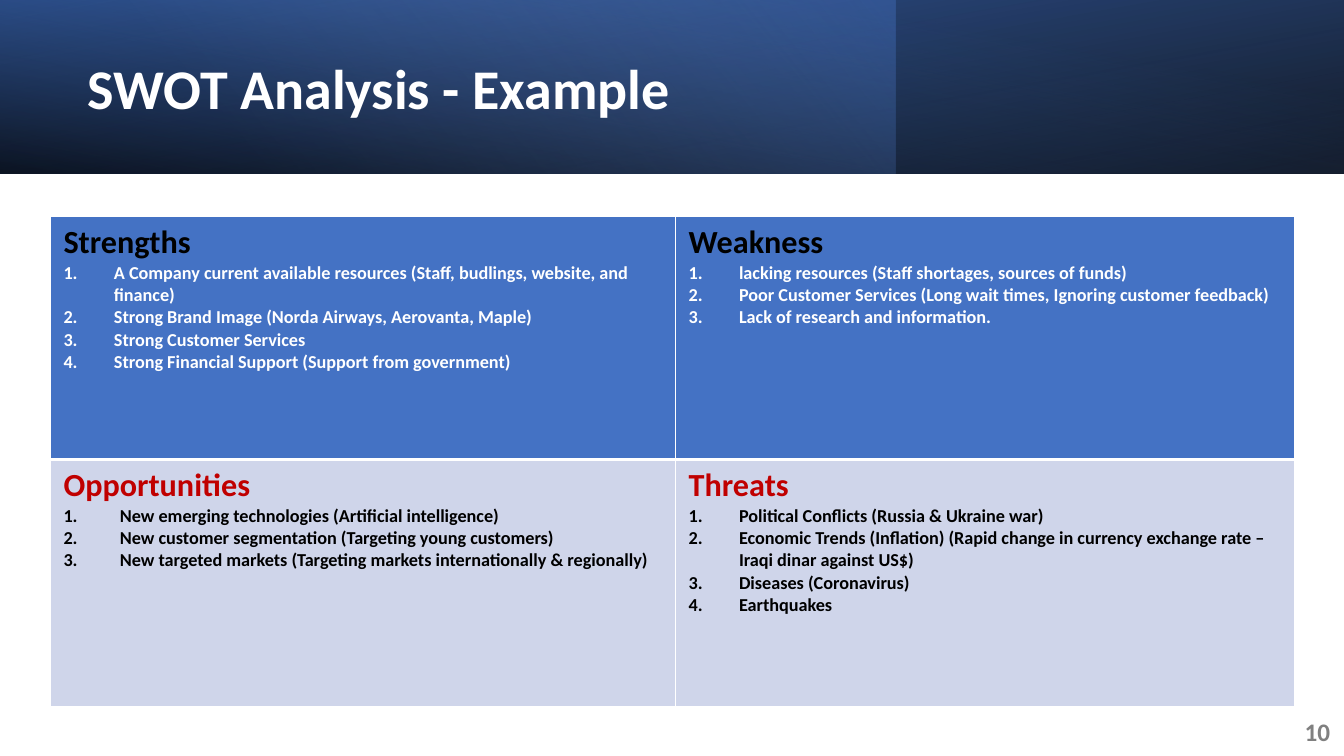
"""Build a SWOT analysis slide with a gradient banner and a two-by-two table."""
from pptx import Presentation
from pptx.dml.color import RGBColor
from pptx.enum.shapes import MSO_SHAPE
from pptx.enum.text import MSO_ANCHOR, PP_ALIGN
from pptx.oxml import parse_xml
from pptx.oxml.ns import nsdecls, qn
from pptx.util import Inches, Pt

WHITE = RGBColor(0xFF, 0xFF, 0xFF)
BLACK = RGBColor(0x00, 0x00, 0x00)
RED = RGBColor(0xC0, 0x00, 0x00)
GREY = RGBColor(0x80, 0x80, 0x80)
BLUE = RGBColor(0x44, 0x72, 0xC4)
PALE = RGBColor(0xCF, 0xD5, 0xEA)
NAVY = RGBColor(0x2F, 0x55, 0x97)
SKY = RGBColor(0x8F, 0xAA, 0xDC)

WIDTH, HEIGHT, BANNER = 13.33, 7.5, 1.72
COLUMNS, ROWS = (6.2, 6.14), (2.41, 2.45)

LAYERS = [
    (WIDTH, 100, 180, True, [(0, BLACK, 96), (100, NAVY, 100)]),
    (WIDTH * 2 / 3, 140, 0, False, [(0, BLUE, 41), (74, SKY, 0)]),
    (WIDTH, 260, 0, True, [(0, BLACK, 63), (78, BLUE, 15)]),
]

QUADRANTS = [
    [("Strengths", 0.5, [
        "A Company current available resources (Staff, budlings, website, and finance)",
        "Strong Brand Image (Norda Airways, Aerovanta, Maple)",
        "Strong Customer Services",
        "Strong Financial Support (Support from government)"]),
     ("Weakness", 0.5, [
         "lacking resources (Staff shortages, sources of funds)",
         "Poor Customer Services (Long wait times, Ignoring customer feedback)",
         "Lack of research and information."])],
    [("Opportunities", 0.56, [
        "New emerging technologies (Artificial intelligence)",
        "New customer segmentation (Targeting young customers)",
        "New targeted markets (Targeting markets internationally & regionally)"]),
     ("Threats", 0.5, [
         "Political Conflicts (Russia & Ukraine war)",
         "Economic Trends (Inflation) (Rapid change in currency exchange rate – "
         "Iraqi dinar against US$)",
         "Diseases (Coronavirus)",
         "Earthquakes"])],
]
ROW_COLORS = [(BLUE, BLACK, WHITE), (PALE, RED, BLACK)]


def write(paragraph, text, size, color):
    paragraph.text = text
    font = paragraph.font
    font.name, font.size, font.bold = "Calibri", Pt(size), True
    font.color.rgb = color


def add_label(left, top, width, height, text, size, color):
    frame = slide.shapes.add_textbox(
        Inches(left), Inches(top), Inches(width), Inches(height)).text_frame
    frame.word_wrap = True
    frame.vertical_anchor = MSO_ANCHOR.MIDDLE
    write(frame.paragraphs[0], text, size, color)
    return frame.paragraphs[0]


presentation = Presentation()
presentation.slide_width, presentation.slide_height = Inches(WIDTH), Inches(HEIGHT)
slide = presentation.slides.add_slide(presentation.slide_layouts[6])

for width, angle, rotation, flipped, stops in LAYERS:
    layer = slide.shapes.add_shape(MSO_SHAPE.RECTANGLE, 0, 0, Inches(width), Inches(BANNER))
    layer.shadow.inherit = False
    layer.line.fill.background()
    layer.fill.background()
    layer.rotation = rotation
    properties = layer._element.spPr
    if flipped:
        properties.find(qn("a:xfrm")).set("flipH", "1")
    stop_xml = "".join(
        f'<a:gs pos="{position * 1000}"><a:srgbClr val="{color}">'
        f'<a:alpha val="{opacity * 1000}"/></a:srgbClr></a:gs>'
        for position, color, opacity in stops)
    gradient = parse_xml(
        f'<a:gradFill {nsdecls("a")} rotWithShape="1"><a:gsLst>{stop_xml}</a:gsLst>'
        f'<a:lin ang="{angle * 60000}" scaled="0"/></a:gradFill>')
    properties.replace(properties.find(qn("a:noFill")), gradient)

title = add_label(0.77, 0.27, 7.72, 1.27, "SWOT Analysis - Example", 40, WHITE)
title.line_spacing = 0.9
number = add_label(12.8, 7.06, 0.49, 0.4, "10", 18, GREY)
number.alignment = PP_ALIGN.RIGHT
number.space_after = Pt(6)

table = slide.shapes.add_table(
    2, 2, Inches(0.5), Inches(2.15), Inches(sum(COLUMNS)), Inches(sum(ROWS))).table
for column, width in zip(table.columns, COLUMNS):
    column.width = Inches(width)
for row, height in zip(table.rows, ROWS):
    row.height = Inches(height)

for row, (fill, heading_color, item_color) in enumerate(ROW_COLORS):
    for column, (heading, indent, items) in enumerate(QUADRANTS[row]):
        cell = table.cell(row, column)
        cell.margin_left = cell.margin_right = Inches(0.13)
        cell.margin_top = cell.margin_bottom = Inches(0.06)
        cell.fill.solid()
        cell.fill.fore_color.rgb = fill
        thick_side = "B" if row == 0 else "T"
        for position, side in enumerate("LRTB"):
            weight = Pt(3 if side == thick_side else 1)
            cell._tc.tcPr.insert(position, parse_xml(
                f'<a:ln{side} {nsdecls("a")} w="{weight}"><a:solidFill>'
                f'<a:srgbClr val="{WHITE}"/></a:solidFill></a:ln{side}>'))
        write(cell.text_frame.paragraphs[0], heading, 23, heading_color)
        for item in items:
            paragraph = cell.text_frame.add_paragraph()
            write(paragraph, item, 13, item_color)
            numbering = paragraph._p.get_or_add_pPr()
            numbering.set("marL", str(Inches(indent)))
            numbering.set("indent", str(-Inches(indent)))
            numbering.insert(0, parse_xml(
                f'<a:buAutoNum {nsdecls("a")} type="arabicPeriod"/>'))

presentation.save("out.pptx")
